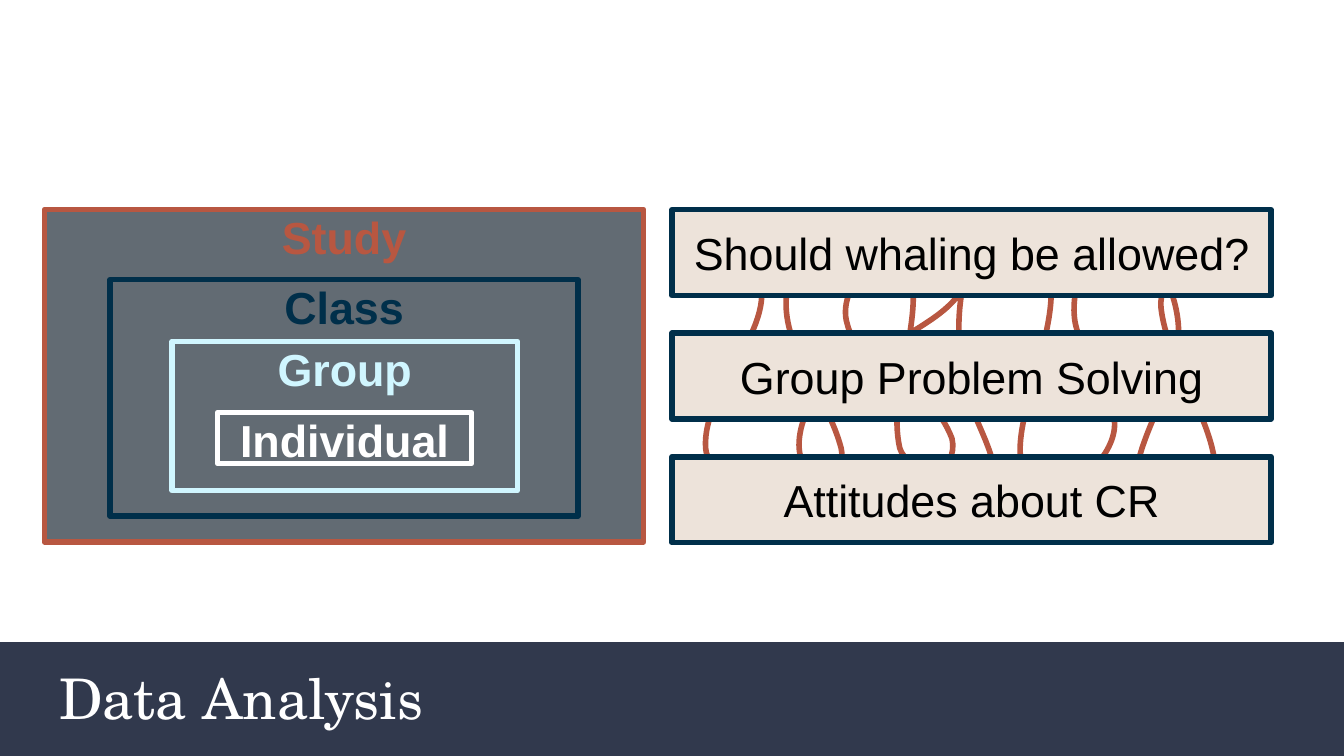
from lxml import etree
from pptx import Presentation
from pptx.dml.color import RGBColor
from pptx.enum import shapes, text
from pptx.oxml import ns
from pptx.util import Pt

NAVY = RGBColor(0x31, 0x39, 0x4D)
WHITE = RGBColor(0xFF, 0xFF, 0xFF)
BLACK = RGBColor(0, 0, 0)
RUST = RGBColor(0xB8, 0x57, 0x41)
SAND = RGBColor(0xED, 0xE3, 0xDA)
BLUE = RGBColor(0x00, 0x2F, 0x4A)
SLATE = RGBColor(0x62, 0x6B, 0x73)
ICE = RGBColor(0xD0, 0xF6, 0xFF)

TITLE = "Data Analysis"
TASKS = ["Should whaling be allowed?", "Group Problem Solving", "Attitudes about CR"]
# label, colour, (left, top, width, height), from the outermost level inwards
LEVELS = [
    ("Study", RUST, (23.8, 112.3, 321, 178)),
    ("Class", BLUE, (59, 149.8, 250.6, 126.7)),
    ("Group", ICE, (92.2, 182.9, 185, 79.9)),
    ("Individual", WHITE, (116.6, 221, 136, 27.4)),
]
# thread woven behind the tasks: start, then two controls and an end per curve
START = (651, 135)
CURVES = [
    ((640, 127), (620, 151), (622, 165)),
    ((626, 201), (662, 237), (648, 271)),
    ((647, 275), (643, 281), (639, 282)),
    ((626, 283), (606, 271), (608, 258)),
    ((610, 233), (628, 210), (631, 184)),
    ((634, 163), (620, 128), (598, 128)),
    ((581, 128), (573, 157), (576, 173)),
    ((580, 192), (595, 207), (597, 225)),
    ((599, 242), (578, 263), (562, 261)),
    ((523, 255), (571, 183), (562, 146)),
    ((559, 137), (548, 131), (539, 130)),
    ((511, 125), (510, 184), (518, 210)),
    ((522, 228), (543, 257), (526, 263)),
    ((516, 266), (505, 259), (497, 253)),
    ((492, 250), (484, 247), (482, 240)),
    ((475, 208), (496, 173), (487, 141)),
    ((485, 135), (481, 128), (475, 127)),
    ((469, 127), (467, 134), (464, 139)),
    ((458, 150), (450, 162), (454, 174)),
    ((456, 184), (468, 189), (476, 196)),
    ((490, 207), (504, 219), (510, 235)),
    ((514, 251), (492, 268), (477, 269)),
    ((462, 270), (443, 264), (433, 252)),
    ((425, 244), (428, 229), (433, 219)),
    ((441, 200), (465, 194), (482, 182)),
    ((496, 173), (516, 163), (518, 147)),
    ((518, 141), (514, 135), (510, 132)),
    ((485, 114), (428, 125), (422, 154)),
    ((416, 183), (442, 210), (450, 238)),
    ((454, 249), (446, 268), (435, 270)),
    ((426, 271), (417, 266), (408, 264)),
    ((396, 260), (379, 253), (378, 240)),
    ((376, 207), (420, 174), (405, 144)),
]


def write(shape, words, font, size, color, align, anchor, inset, bold=False):
    frame = shape.text_frame
    frame.text = words
    frame.word_wrap = True
    frame.auto_size = text.MSO_AUTO_SIZE.NONE
    frame.vertical_anchor = anchor
    frame.margin_left = frame.margin_right = Pt(inset)
    frame.margin_top = frame.margin_bottom = Pt(inset)
    para = frame.paragraphs[0]
    para.alignment = align
    para.font.name = font
    para.font.size = Pt(size)
    para.font.bold = bold
    para.font.color.rgb = color


def add_box(slide, place, fill, line=None):
    box = slide.shapes.add_shape(shapes.MSO_SHAPE.RECTANGLE, *map(Pt, place))
    box.shadow.inherit = False
    box.fill.solid()
    box.fill.fore_color.rgb = fill
    if line is None:
        box.line.fill.background()
    else:
        box.line.color.rgb = line
        box.line.width = Pt(3)
    return box


def add_thread(slide):
    """Draw straight legs between the curve ends, then bend each one."""
    pen = slide.shapes.build_freeform(*map(Pt, START))
    pen.add_line_segments([tuple(map(Pt, c[-1])) for c in CURVES], close=False)
    thread = pen.convert_to_shape()
    thread.shadow.inherit = False
    thread.fill.background()
    thread.line.color.rgb = RUST
    thread.line.width = Pt(3)
    legs = list(thread._element.iter(ns.qn("a:lnTo")))
    for leg, curve in zip(legs, CURVES):
        bend = etree.Element(ns.qn("a:cubicBezTo"))
        for x, y in curve:
            etree.SubElement(bend, ns.qn("a:pt"),
                             x=str(Pt(x) - thread.left), y=str(Pt(y) - thread.top))
        leg.getparent().replace(leg, bend)


def main():
    deck = Presentation()
    deck.slide_width, deck.slide_height = Pt(720), Pt(405)
    slide = deck.slides.add_slide(deck.slide_layouts[5])

    band = add_box(slide, (0, 344, 720, 61), NAVY)
    title = slide.shapes.title
    title.left, title.top, title.width, title.height = map(Pt, (24.5, 355.7, 628.6, 36))
    write(title, TITLE, "TeX Gyre Schola", 30, WHITE,
          text.PP_ALIGN.LEFT, text.MSO_ANCHOR.MIDDLE, 7.2)
    title._element.addprevious(band._element)

    add_thread(slide)
    for i, task in enumerate(TASKS):
        box = add_box(slide, (360, 112.3 + 66.2 * i, 321, 46), SAND, BLUE)
        write(box, task, "Arial", 24, BLACK,
              text.PP_ALIGN.CENTER, text.MSO_ANCHOR.MIDDLE, 7.2)
    for label, color, place in LEVELS:
        box = add_box(slide, place, SLATE, color)
        write(box, label, "Arial", 24, color,
              text.PP_ALIGN.CENTER, text.MSO_ANCHOR.TOP, 0, bold=True)

    deck.save("out.pptx")


if __name__ == "__main__":
    main()
